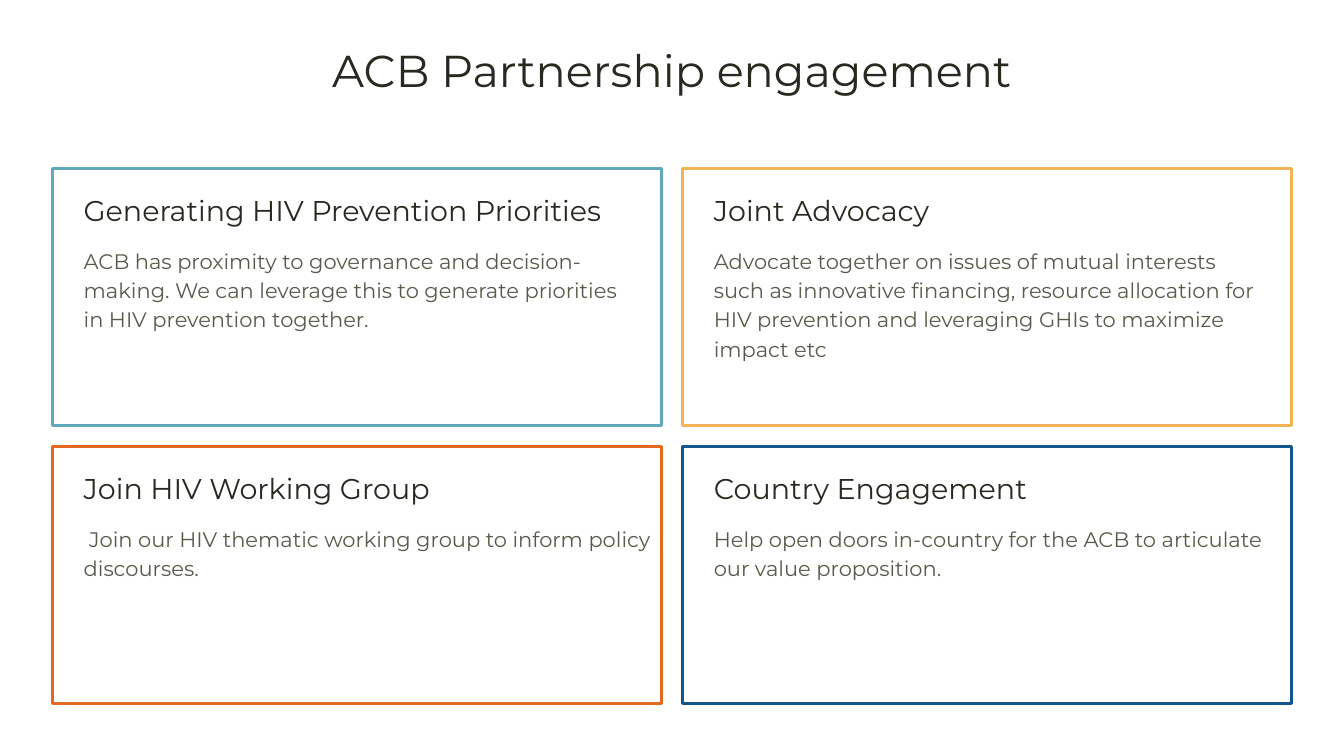
"""Build the partnership engagement slide: a title above a two-by-two grid of cards."""
from dataclasses import dataclass

from pptx import Presentation
from pptx.dml.color import RGBColor
from pptx.enum.shapes import MSO_SHAPE
from pptx.enum.text import PP_ALIGN
from pptx.slide import Slide
from pptx.util import Inches, Pt


@dataclass(frozen=True)
class TextStyle:
    """Size, line spacing and colour of one kind of text."""
    size: float
    leading: float
    color: str
    align: PP_ALIGN = PP_ALIGN.LEFT


@dataclass(frozen=True)
class Theme:
    """Font, text styles, card colours and line width."""
    font: str = "Montserrat"
    title: TextStyle = TextStyle(31.9, 40.2, "2A2921", PP_ALIGN.CENTER)
    heading: TextStyle = TextStyle(20.4, 25.7, "2A2921")
    body: TextStyle = TextStyle(15, 21, "5A5A4C")
    teal: str = "62A8BB"
    amber: str = "F0B356"
    orange: str = "E66922"
    navy: str = "14558C"
    line: float = 2


@dataclass(frozen=True)
class Grid:
    """Card grid in inches."""
    left: float = 0.52
    top: float = 1.67
    width: float = 6.04
    height: float = 2.55
    gap: float = 0.21

    def origin(self, col: int, row: int) -> tuple[float, float]:
        """Return the top left corner of a cell."""
        return (self.left + col * (self.width + self.gap),
                self.top + row * (self.height + self.gap))


@dataclass(frozen=True)
class Box:
    """Position and size in inches."""
    x: float
    y: float
    w: float
    h: float

    def emu(self) -> tuple[int, ...]:
        """Return the four lengths as slide units."""
        return tuple(Inches(v) for v in (self.x, self.y, self.w, self.h))


@dataclass(frozen=True)
class Card:
    """One outlined card with its cell in the grid."""
    col: int
    row: int
    color: str
    heading: str
    body: str
    lines: int
    body_width: float = 5.5


THEME = Theme()
GRID = Grid()
SLIDE_W, SLIDE_H = 13.33, 7.5
INDENT, HEADING_DROP, BODY_DROP = 0.31, 0.23, 0.75
HEADING_W, HEADING_H = 6.07, 0.36

CARDS = [
    Card(0, 0, THEME.teal, "Generating HIV Prevention Priorities",
         "ACB has proximity to governance and decision-making. We can leverage "
         "this to generate priorities in HIV prevention together.", 3),
    Card(1, 0, THEME.amber, "Joint Advocacy",
         "Advocate together on issues of mutual interests such as innovative "
         "financing, resource allocation for HIV prevention and leveraging GHIs "
         "to maximize impact etc", 4),
    Card(0, 1, THEME.orange, "Join HIV Working Group",
         " Join our HIV thematic working group to inform policy discourses.",
         2, HEADING_W),
    Card(1, 1, THEME.navy, "Country Engagement",
         "Help open doors in-country for the ACB to articulate our value "
         "proposition.", 2),
]


def add_text(s: Slide, box: Box, text: str, style: TextStyle) -> None:
    """Add a text box without margins in the given style."""
    tf = s.shapes.add_textbox(*box.emu()).text_frame
    frame = {"word_wrap": True, "margin_left": 0, "margin_top": 0,
             "margin_right": 0, "margin_bottom": 0}
    for name, value in frame.items():
        setattr(tf, name, value)
    p = tf.paragraphs[0]
    for name, value in {"alignment": style.align,
                        "line_spacing": Pt(style.leading)}.items():
        setattr(p, name, value)
    r = p.add_run()
    r.text = text
    for name, value in {"name": THEME.font, "size": Pt(style.size)}.items():
        setattr(r.font, name, value)
    r.font.color.rgb = RGBColor.from_string(style.color)


def add_card(s: Slide, card: Card) -> None:
    """Add the outline, heading and body of a card."""
    x, y = GRID.origin(card.col, card.row)
    sp = s.shapes.add_shape(MSO_SHAPE.RECTANGLE,
                            *Box(x, y, GRID.width, GRID.height).emu())
    sp.shadow.inherit = False
    sp.fill.background()
    sp.line.color.rgb = RGBColor.from_string(card.color)
    sp.line.width = Pt(THEME.line)
    add_text(s, Box(x + INDENT, y + HEADING_DROP, HEADING_W, HEADING_H),
             card.heading, THEME.heading)
    body_h = card.lines * THEME.body.leading / 72
    add_text(s, Box(x + INDENT, y + BODY_DROP, card.body_width, body_h),
             card.body, THEME.body)


def main() -> None:
    """Build and save the slide."""
    prs = Presentation()
    prs.slide_width, prs.slide_height = Inches(SLIDE_W), Inches(SLIDE_H)
    s = prs.slides.add_slide(prs.slide_layouts[6])
    add_text(s, Box(0, 0.4, SLIDE_W, 0.56), "ACB Partnership engagement", THEME.title)
    for card in CARDS:
        add_card(s, card)
    prs.save("out.pptx")


if __name__ == "__main__":
    main()
